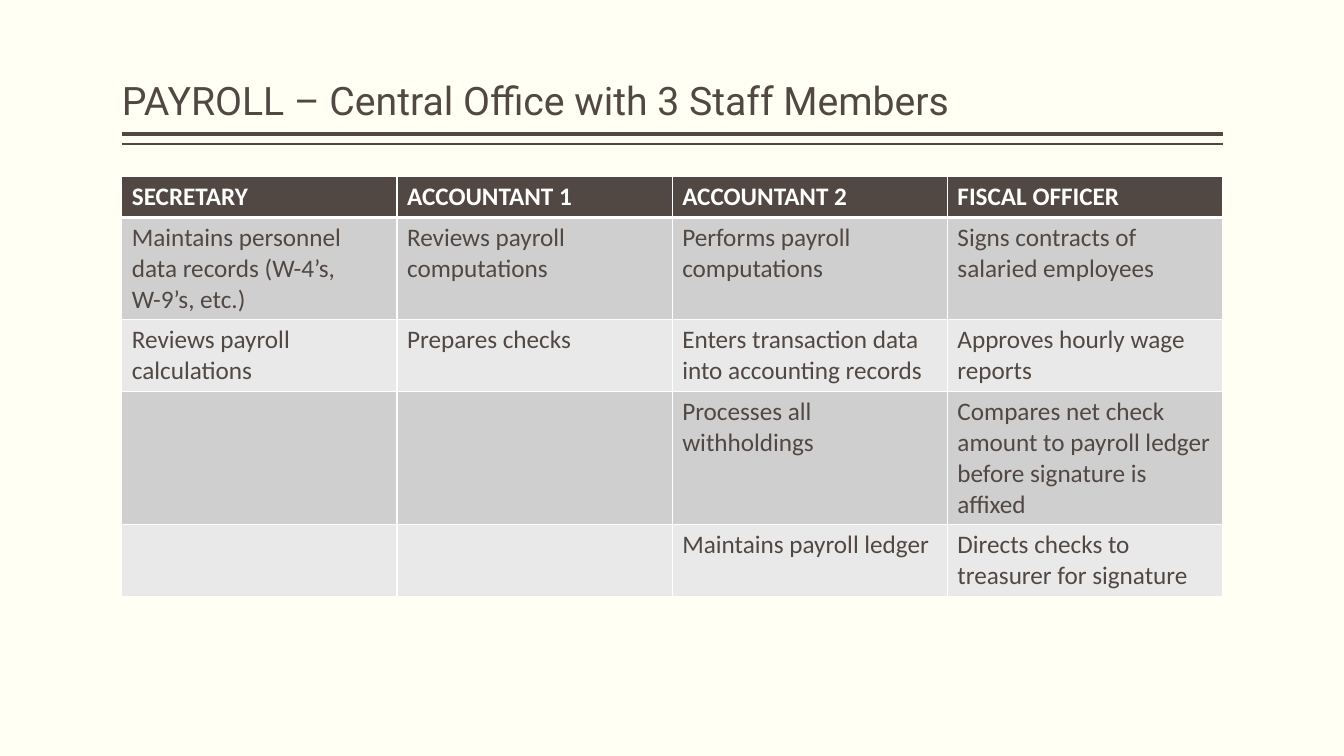
from lxml import etree
from pptx import Presentation
from pptx import util as u
from pptx.dml.color import RGBColor
from pptx.enum import shapes, text
from pptx.oxml import ns

COLORS = {
    "background": "FFFFF3",
    "dark": "514843",
    "white": "FFFFFF",
    "odd_row": "D0CFCF",
    "even_row": "E9E9E9",
}
LEFT, WIDTH = u.Cm(3.07), u.Cm(27.74)
TABLE_TOP = u.Cm(4.45)
ROW_HEIGHTS = [1.03, 2.56, 1.81, 3.35, 1.81]
RULES = [(3.38, 3), (3.63, 1)]  # height on the slide in cm, line width in points

DUTIES = [
    ["SECRETARY", "ACCOUNTANT 1", "ACCOUNTANT 2", "FISCAL OFFICER"],
    ["Maintains personnel data records (W-4’s, W-9’s, etc.)",
     "Reviews payroll computations",
     "Performs payroll computations",
     "Signs contracts of salaried employees"],
    ["Reviews payroll calculations",
     "Prepares checks",
     "Enters transaction data into accounting records",
     "Approves hourly wage reports"],
    ["", "", "Processes all withholdings",
     "Compares net check amount to payroll ledger before signature is affixed"],
    ["", "", "Maintains payroll ledger",
     "Directs checks to treasurer for signature"],
]


def color(name):
    return RGBColor.from_string(COLORS[name])


def write(frame, content, font="Calibri", size=18, fill="dark", bold=False, spacing=1.0):
    paragraph = frame.paragraphs[0]
    paragraph.alignment = text.PP_ALIGN.LEFT
    paragraph.line_spacing = spacing
    paragraph.font.size = u.Pt(size)
    if content:
        run = paragraph.add_run()
        run.text = content
        run.font.name = font
        run.font.size = u.Pt(size)
        run.font.bold = bold
        run.font.color.rgb = color(fill)


def add_title(slide, content):
    title = slide.shapes.title
    title.left, title.top, title.width, title.height = LEFT, u.Cm(0.2), WIDTH, u.Cm(3.05)
    frame = title.text_frame
    frame.word_wrap = True
    frame.auto_size = text.MSO_AUTO_SIZE.NONE
    frame.vertical_anchor = text.MSO_ANCHOR.BOTTOM
    frame.margin_left = frame.margin_right = 0
    frame.margin_top = frame.margin_bottom = u.Cm(0.13)
    write(frame, content, font="Roboto", size=28, spacing=0.9)


def add_rule(slide, top, width):
    rule = slide.shapes.add_connector(
        shapes.MSO_CONNECTOR.STRAIGHT, LEFT, u.Cm(top), LEFT + WIDTH, u.Cm(top))
    rule.line.color.rgb = color("dark")
    rule.line.width = u.Pt(width)
    etree.SubElement(rule._element.spPr, ns.qn("a:effectLst"))


def add_borders(cell, **widths):
    """Draw white borders; widths maps the sides L, R, T and B to points."""
    properties = cell._tc.get_or_add_tcPr()
    for side, width in widths.items():
        line = etree.SubElement(properties, ns.qn(f"a:ln{side}"), w=str(u.Pt(width)))
        fill = etree.SubElement(line, ns.qn("a:solidFill"))
        etree.SubElement(fill, ns.qn("a:srgbClr"), val=COLORS["white"])


def add_duty_table(slide):
    columns = len(DUTIES[0])
    frame = slide.shapes.add_table(
        len(DUTIES), columns, LEFT, TABLE_TOP, WIDTH, u.Cm(sum(ROW_HEIGHTS)))
    table = frame.table
    table.horz_banding = False
    for column in table.columns:
        column.width = WIDTH // columns
    for i, (duties, height) in enumerate(zip(DUTIES, ROW_HEIGHTS)):
        table.rows[i].height = u.Cm(height)
        header = i == 0
        band = "dark" if header else "odd_row" if i % 2 else "even_row"
        for j, duty in enumerate(duties):
            cell = table.cell(i, j)
            add_borders(cell, L=1, R=1, T=3 if i == 1 else 1, B=3 if header else 1)
            cell.fill.solid()
            cell.fill.fore_color.rgb = color(band)
            write(cell.text_frame, duty, bold=header, fill="white" if header else "dark")


def main():
    presentation = Presentation()
    presentation.slide_width, presentation.slide_height = u.Cm(33.87), u.Cm(19.05)
    title_only = presentation.slide_layouts[5]
    slide = presentation.slides.add_slide(title_only)
    slide.background.fill.solid()
    slide.background.fill.fore_color.rgb = color("background")
    for top, width in RULES:
        add_rule(slide, top, width)
    add_title(slide, "PAYROLL – Central Office with 3 Staff Members")
    add_duty_table(slide)
    presentation.save("out.pptx")


if __name__ == "__main__":
    main()
